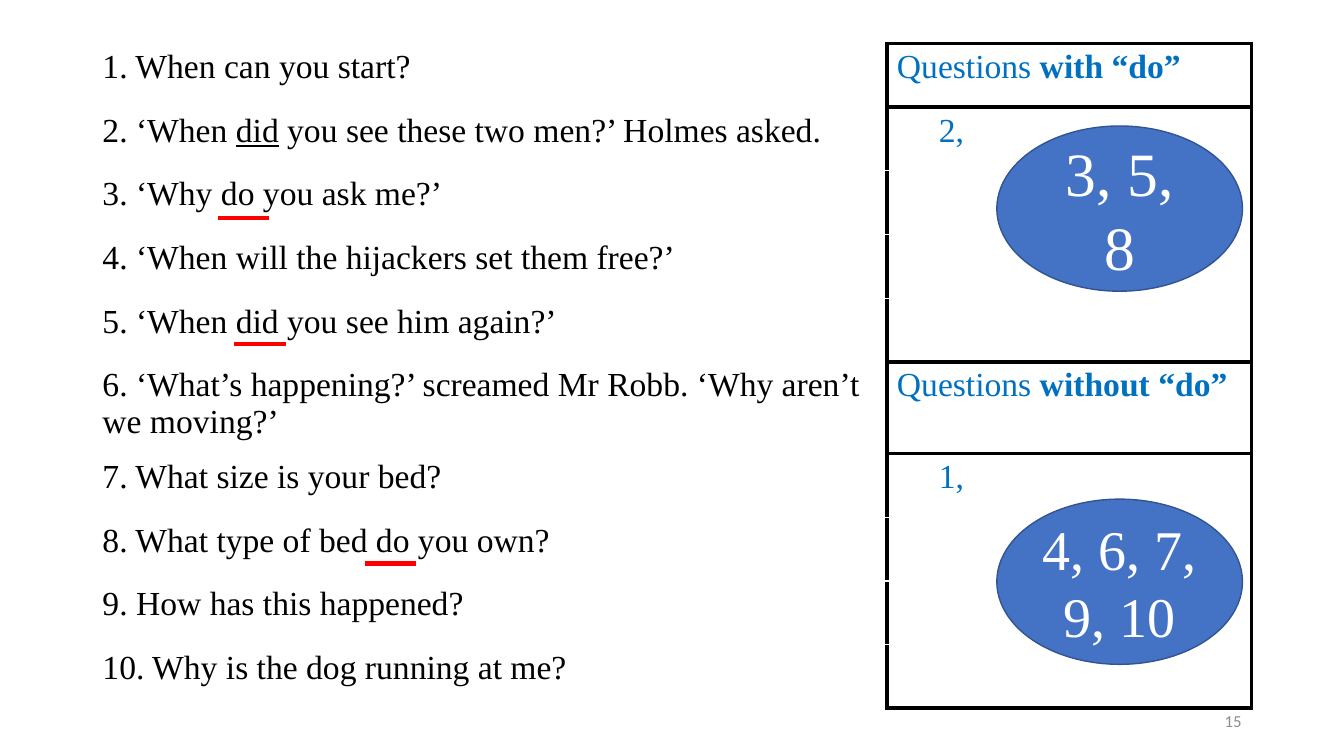
import pptx
import pptx.util
import pptx.dml.color
import pptx.enum.shapes
import pptx.enum.text
import pptx.oxml
import pptx.oxml.ns

PX = 6350
SERIF = "Times New Roman"
COLORS = {
    "ink": "000000", "heading": "0070C0", "oval": "4472C4", "oval_edge": "325491",
    "white": "FFFFFF", "mark": "FF0000", "number": "8C8C8C",
}
QUESTIONS = [
    [("1. When can you start?", "")],
    [("2. ‘When ", ""), ("did", "u"), (" you see these two men?’ Holmes asked.", "")],
    [("3. ‘Why do you ask me?’", "")],
    [("4. ‘When will the hijackers set them free?’", "")],
    [("5. ‘When did you see him again?’", "")],
    [("6. ‘What’s happening?’ screamed Mr Robb. ‘Why aren’t we moving?’", "")],
    [("7. What size is your bed?", "")],
    [("8. What type of bed do you own?", "")],
    [("9. How has this happened?", "")],
    [("10. Why is the dog running at me?", "")],
]
GROUPS = [
    (0, [("Questions ", ""), ("with “do”", "b")], "2,"),
    (5, [("Questions ", ""), ("without “do”", "b")], "1,"),
]
ANSWER_ROWS = 4
ANSWER_INDENT = 60
TABLE_LEFT, TABLE_TOP = 132, 62
COLUMN_WIDTHS = [1135, 521]
ROW_HEIGHT, TALL_ROW_HEIGHT, TALL_ROW = 91, 131, 5
OVAL_LEFT, OVAL_WIDTH, OVAL_HEIGHT = 1424, 351, 236
OVALS = [(180, "3, 5, 8", 44), (713, "4, 6, 7, 9, 10", 40)]
MARK_WIDTH = 74
MARKS = [(335, 492), (311, 311), (521, 805)]
NUMBER_BOX = (1356, 1001, 432, 58)


def px(*lengths):
    return [pptx.util.Emu(length * PX) for length in lengths]


def color(name):
    return pptx.dml.color.RGBColor.from_string(COLORS[name])


def add_span(para, text, size, ink, font=SERIF, style=""):
    span = para.add_run()
    span.text = text
    span.font.name = font
    span.font.size = pptx.util.Pt(size)
    span.font.color.rgb = color(ink)
    span.font.bold = "b" in style
    span.font.underline = "u" in style


def fill_cell(cell, spans, ink, indent=0):
    para = cell.text_frame.paragraphs[0]
    if indent:
        para._p.get_or_add_pPr().set("marL", str(indent * PX))
    for text, style in spans:
        add_span(para, text, 24, ink, style=style)


def border_cell(cell, sides):
    properties = cell._tc.get_or_add_tcPr()
    for side in sides:
        properties.append(pptx.oxml.parse_xml(
            f'<a:ln{side} {pptx.oxml.ns.nsdecls("a")} w="38100"><a:solidFill>'
            f'<a:srgbClr val="{COLORS["ink"]}"/></a:solidFill></a:ln{side}>'))
    cell.fill.background()


def add_question_table(page):
    heights = [TALL_ROW_HEIGHT if i == TALL_ROW else ROW_HEIGHT for i in range(len(QUESTIONS))]
    frame = page.shapes.add_table(
        len(QUESTIONS), 2, *px(TABLE_LEFT, TABLE_TOP, sum(COLUMN_WIDTHS), sum(heights)))
    table = frame.table
    table.first_row = table.horz_banding = False
    for column, width in zip(table.columns, COLUMN_WIDTHS):
        column.width = px(width)[0]
    for i, (height, spans) in enumerate(zip(heights, QUESTIONS)):
        table.rows[i].height = px(height)[0]
        fill_cell(table.cell(i, 0), spans, "ink")
        border_cell(table.cell(i, 0), "R")
        border_cell(table.cell(i, 1), "LRTB")
    for row, heading, answer in GROUPS:
        fill_cell(table.cell(row, 1), heading, "heading")
        first = table.cell(row + 1, 1)
        first.merge(table.cell(row + ANSWER_ROWS, 1))
        fill_cell(first, [(answer, "")], "heading", ANSWER_INDENT)


def add_oval(page, top, text, size):
    oval = page.shapes.add_shape(
        pptx.enum.shapes.MSO_SHAPE.OVAL, *px(OVAL_LEFT, top, OVAL_WIDTH, OVAL_HEIGHT))
    oval.shadow.inherit = False
    oval.fill.solid()
    oval.fill.fore_color.rgb = color("oval")
    oval.line.color.rgb = color("oval_edge")
    oval.line.width = pptx.util.Pt(1)
    oval.text_frame.word_wrap = True
    oval.text_frame.vertical_anchor = pptx.enum.text.MSO_ANCHOR.MIDDLE
    para = oval.text_frame.paragraphs[0]
    para.alignment = pptx.enum.text.PP_ALIGN.CENTER
    add_span(para, text, size, "white")


def add_mark(page, left, top):
    mark = page.shapes.add_connector(
        pptx.enum.shapes.MSO_CONNECTOR.STRAIGHT, *px(left, top, left + MARK_WIDTH, top))
    mark.line.color.rgb = color("mark")
    mark.line.width = pptx.util.Pt(3)
    mark._element.spPr.append(pptx.oxml.parse_xml(
        f'<a:effectLst {pptx.oxml.ns.nsdecls("a")}/>'))


def add_page_number(page):
    box = page.shapes.add_textbox(*px(*NUMBER_BOX))
    box.text_frame.word_wrap = True
    box.text_frame.vertical_anchor = pptx.enum.text.MSO_ANCHOR.MIDDLE
    para = box.text_frame.paragraphs[0]
    para.alignment = pptx.enum.text.PP_ALIGN.RIGHT
    add_span(para, "15", 12, "number", font="Calibri")


def main():
    deck = pptx.Presentation()
    deck.slide_width, deck.slide_height = px(1920, 1080)
    page = deck.slides.add_slide(deck.slide_layouts[6])
    add_question_table(page)
    for oval in OVALS:
        add_oval(page, *oval)
    add_page_number(page)
    for mark in MARKS:
        add_mark(page, *mark)
    deck.save("out.pptx")


if __name__ == "__main__":
    main()
